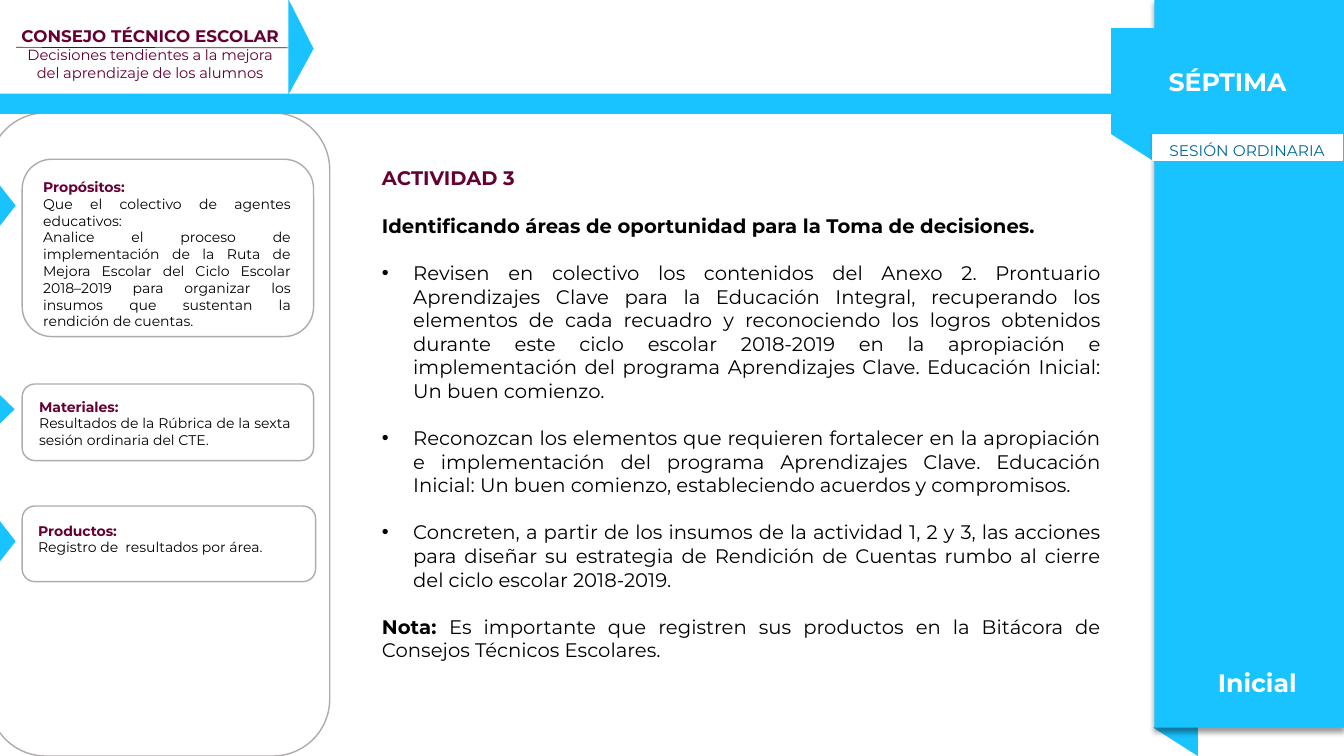
from lxml import etree
from pptx import Presentation
from pptx.dml.color import RGBColor
from pptx.enum.shapes import MSO_CONNECTOR, MSO_SHAPE
from pptx.enum.text import MSO_ANCHOR, MSO_AUTO_SIZE, PP_ALIGN
from pptx.oxml import parse_xml
from pptx.oxml.ns import nsdecls, qn
from pptx.util import Inches, Pt

RECT, ROUNDED, TRIANGLE = MSO_SHAPE.RECTANGLE, MSO_SHAPE.ROUNDED_RECTANGLE, MSO_SHAPE.ISOSCELES_TRIANGLE
LEFT, CENTER, JUSTIFY = PP_ALIGN.LEFT, PP_ALIGN.CENTER, PP_ALIGN.JUSTIFY
TOP, MIDDLE = MSO_ANCHOR.TOP, MSO_ANCHOR.MIDDLE
GROW, FIXED = MSO_AUTO_SIZE.SHAPE_TO_FIT_TEXT, MSO_AUTO_SIZE.NONE
STRAIGHT = MSO_CONNECTOR.STRAIGHT

FONT = "Montserrat"
COLORS = {"sky": "19C3FF", "wine": "660033", "teal": "006699", "gray": "AFABAB", "white": "FFFFFF", "black": "000000"}

STYLES = {
    "session": {"size": Pt(18), "bold": True, "color": "white", "align": CENTER},
    "session_kind": {"size": Pt(11), "bold": False, "color": "teal", "align": CENTER, "line_spacing": 1.5},
    "council": {"size": Pt(12), "bold": True, "color": "wine", "align": CENTER},
    "motto": {"size": Pt(10.5), "bold": False, "color": "wine", "align": CENTER},
    "card_title": {"size": Pt(10), "bold": True, "color": "wine", "align": LEFT},
    "card_body": {"size": Pt(10), "bold": False, "color": "black", "align": JUSTIFY},
    "activity": {"size": Pt(14), "bold": True, "color": "wine", "align": JUSTIFY},
    "subtitle": {"size": Pt(14), "bold": True, "color": "black", "align": JUSTIFY, "space_before": Pt(17)},
    "step": {"size": Pt(14), "bold": False, "color": "black", "align": JUSTIFY, "space_before": Pt(17), "bullet": True},
    "note": {"size": Pt(14), "bold": False, "color": "black", "align": JUSTIFY, "space_before": Pt(17)},
}

PANEL = (-0.11, 1.12, 3.38, 6.38)
HEADER_BACK = (2.86, 0, 10.47, 0.95)
HEADER_ARROW = (2.51, 0.34, 0.95, 0.25)
HEADER_BAR = (-0.03, 0.93, 13.15, 0.2)
HEADER_TEXT = (0.02, 0.16, 2.94, 0.74)
RULE_START = (0.16, 0.47)
RIBBON = (11.45, -0.01, 1.88, 7.23)
FOLDS = [(11.38, 7, 0.56, 0.44), (10.96, 1.11, 0.56, 0.44)]
SESSION_KIND = (11.43, 1.31, 1.88, 0.28)
SESSION = (11.02, 0.28, 2.31, 1.05)
LEVEL = (11.62, 6.57, 1.7, 0.4)
ACTIVITY = (3.69, 1.6, 7.33, 5.05)

COUNCIL_LINES = [
    ("council", "CONSEJO TÉCNICO ESCOLAR"),
    ("motto", "Decisiones tendientes a la mejora"),
    ("motto", "del aprendizaje de los alumnos"),
]

CARDS = [
    {
        "frame": (0.22, 1.58, 2.89, 1.76), "arrow": (-0.13, 1.96, 0.41, 0.16), "text": (0.33, 1.72, 2.65, 1.62),
        "lines": [
            ("card_title", "Propósitos:"),
            ("card_body", "Que el colectivo de agentes educativos:"),
            ("card_body", "Analice el proceso de implementación de la Ruta de Mejora Escolar del Ciclo Escolar "
                          "2018–2019 para organizar los insumos que sustentan la rendición de cuentas."),
        ],
    },
    {
        "frame": (0.22, 3.81, 2.89, 0.76), "arrow": (-0.09, 3.98, 0.31, 0.16), "text": (0.29, 3.9, 2.69, 0.61),
        "lines": [
            ("card_title", "Materiales:"),
            ("card_body", "Resultados de la Rúbrica de la sexta sesión ordinaria del CTE."),
        ],
    },
    {
        "frame": (0.22, 5.02, 2.91, 0.75), "arrow": (-0.13, 5.29, 0.41, 0.16), "text": (0.28, 5.13, 2.82, 0.44),
        "lines": [
            ("card_title", "Productos:"),
            ("card_body", "Registro de  resultados por área."),
        ],
    },
]

ACTIVITY_LINES = [
    ("activity", "ACTIVIDAD 3"),
    ("subtitle", "Identificando áreas de oportunidad para la Toma de decisiones."),
    ("step", "Revisen en colectivo los contenidos del Anexo 2. Prontuario Aprendizajes Clave para la Educación "
             "Integral, recuperando los elementos de cada recuadro y reconociendo los logros obtenidos durante "
             "este ciclo escolar 2018-2019 en la apropiación e implementación del programa Aprendizajes Clave. "
             "Educación Inicial: Un buen comienzo."),
    ("step", "Reconozcan los elementos que requieren fortalecer en la apropiación e implementación del programa "
             "Aprendizajes Clave. Educación Inicial: Un buen comienzo, estableciendo acuerdos y compromisos."),
    ("step", "Concreten, a partir de los insumos de la actividad 1, 2 y 3, las acciones para diseñar su estrategia "
             "de Rendición de Cuentas rumbo al cierre del ciclo escolar 2018-2019."),
    ("note", "Nota: ", "Es importante que registren sus productos en la Bitácora de Consejos Técnicos Escolares."),
]


def rgb(name):
    return RGBColor.from_string(COLORS[name])


def add_block(slide, preset, box, fill=None, line=None, rotation=0):
    block = slide.shapes.add_shape(preset, *map(Inches, box))
    block.shadow.inherit = False
    block.rotation = rotation
    if fill:
        block.fill.solid()
        block.fill.fore_color.rgb = rgb(fill)
    else:
        block.fill.background()
    if line:
        block.line.color.rgb = rgb(line)
        block.line.width = Pt(1)
    else:
        block.line.fill.background()
    return block


def add_bullet(paragraph):
    properties = paragraph._p.get_or_add_pPr()
    properties.set("marL", str(Inches(0.31)))
    properties.set("indent", str(-Inches(0.31)))
    etree.SubElement(properties, qn("a:buFont")).set("typeface", "Arial")
    etree.SubElement(properties, qn("a:buChar")).set("char", "•")


def write_lines(block, lines, anchor, auto_size=FIXED):
    frame = block.text_frame
    frame_format = {"word_wrap": True, "vertical_anchor": anchor, "auto_size": auto_size}
    for key, value in frame_format.items():
        setattr(frame, key, value)
    for index, (style_name, *parts) in enumerate(lines):
        style = STYLES[style_name]
        paragraph = frame.paragraphs[0] if index == 0 else frame.add_paragraph()
        if style.get("bullet"):
            add_bullet(paragraph)
        paragraph.alignment = style["align"]
        for key in ("line_spacing", "space_before"):
            if key in style:
                setattr(paragraph, key, style[key])
        for position, part in enumerate(parts):
            run = paragraph.add_run()
            run.text = part
            lead = len(parts) > 1 and position == 0
            font_format = {"name": FONT, "size": style["size"], "bold": style["bold"] or lead}
            for key, value in font_format.items():
                setattr(run.font, key, value)
            run.font.color.rgb = rgb(style["color"])


def add_text(slide, box, lines, anchor=TOP, auto_size=GROW):
    write_lines(slide.shapes.add_textbox(*map(Inches, box)), lines, anchor, auto_size)


def add_ribbon_shadow(ribbon):
    effects = ribbon._element.spPr.find(qn("a:effectLst"))
    effects.append(parse_xml(
        f'<a:outerShdw {nsdecls("a")} blurRad="{Pt(4)}" dist="{Pt(3)}" dir="5400000" algn="t" rotWithShape="0">'
        f'<a:srgbClr val="{COLORS["black"]}"><a:alpha val="40000"/></a:srgbClr></a:outerShdw>'))


def add_header(slide):
    back = add_block(slide, RECT, HEADER_BACK, "white")
    arrow = add_block(slide, TRIANGLE, HEADER_ARROW, "sky", rotation=90)
    arrow.adjustments[0] = 0.52
    rule = slide.shapes.add_connector(STRAIGHT, *map(Inches, RULE_START), Inches(2.86), Inches(0.48))
    rule.end_connect(back, 1)
    rule.line.color.rgb = rgb("wine")
    rule.line.width = Pt(0.5)
    etree.SubElement(rule._element.spPr, qn("a:effectLst"))
    add_block(slide, RECT, HEADER_BAR, "sky")
    add_text(slide, HEADER_TEXT, COUNCIL_LINES, MIDDLE, FIXED)


def add_session_ribbon(slide):
    for fold in FOLDS:
        add_block(slide, TRIANGLE, fold, "sky", rotation=270)
    add_ribbon_shadow(add_block(slide, RECT, RIBBON, "sky"))
    kind = add_block(slide, RECT, SESSION_KIND, "white", "white")
    write_lines(kind, [("session_kind", "SESIÓN ORDINARIA")], MIDDLE)
    session = add_block(slide, RECT, SESSION, "sky")
    write_lines(session, [("session", "SÉPTIMA")], MIDDLE)
    add_text(slide, LEVEL, [("session", "Inicial")])


def main():
    deck = Presentation()
    deck.slide_width, deck.slide_height = Inches(13.33), Inches(7.5)
    slide = deck.slides.add_slide(deck.slide_layouts[6])
    add_block(slide, ROUNDED, PANEL, line="gray")
    add_header(slide)
    add_session_ribbon(slide)
    for card in CARDS:
        add_block(slide, ROUNDED, card["frame"], line="gray")
        add_block(slide, TRIANGLE, card["arrow"], "sky", rotation=90)
        add_text(slide, card["text"], card["lines"])
    add_text(slide, ACTIVITY, ACTIVITY_LINES)
    deck.save("out.pptx")


if __name__ == "__main__":
    main()
